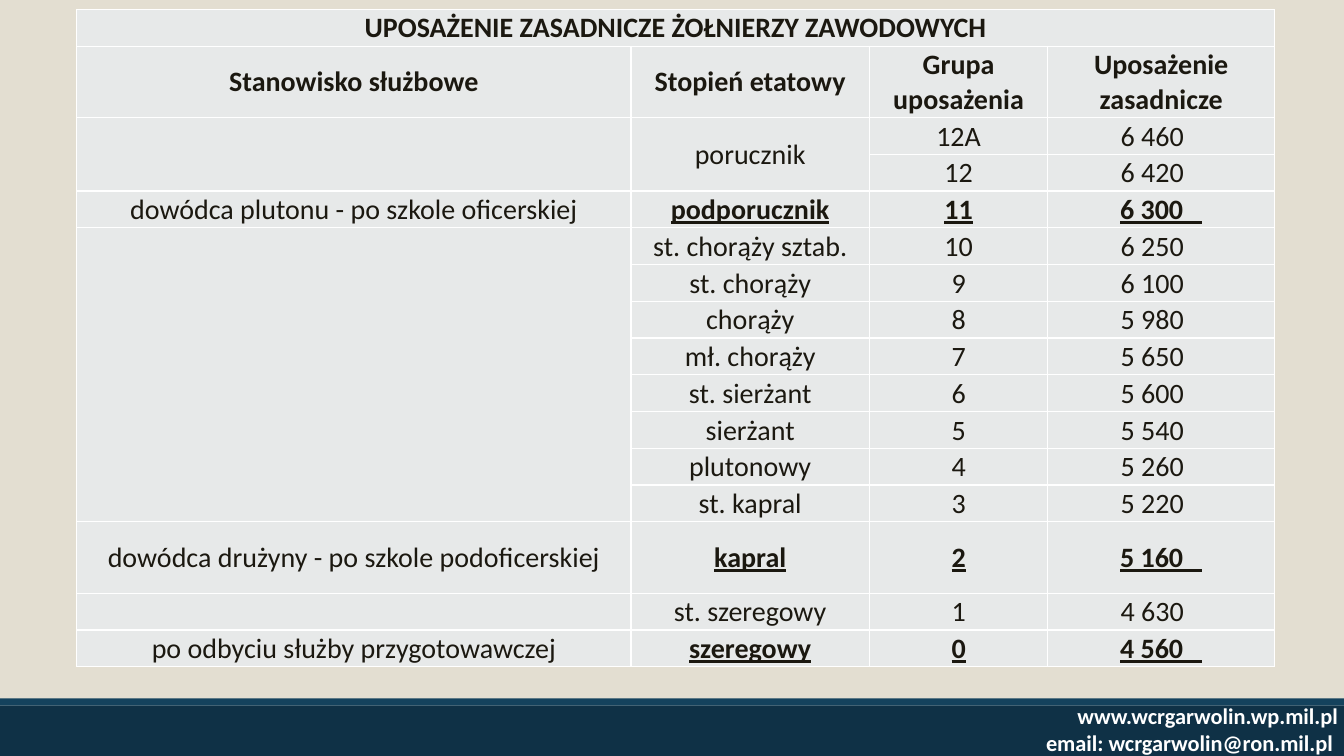
from dataclasses import dataclass

from lxml import etree
from pptx import Presentation
from pptx.dml.color import RGBColor
from pptx.enum.shapes import MSO_SHAPE
from pptx.enum.text import MSO_ANCHOR, MSO_AUTO_SIZE, PP_ALIGN
from pptx.oxml.ns import qn
from pptx.util import Emu, Pt

RECTANGLE = MSO_SHAPE.RECTANGLE
CENTER, RIGHT = PP_ALIGN.CENTER, PP_ALIGN.RIGHT
MIDDLE = MSO_ANCHOR.MIDDLE
GROW = MSO_AUTO_SIZE.SHAPE_TO_FIT_TEXT

EMU_PER_PX = 9525
FONT = "Calibri"
COLORS = {
    "background": "E3DED1",
    "footer": "0F3146",
    "strip": "14425D",
    "cell": "E7E9E9",
    "text": "1B1810",
    "white": "FFFFFF",
}
COLUMN_WIDTHS = (528, 227, 170, 216)
ROW_HEIGHT, TALL_ROW_HEIGHT = 35, 68
PAY_INSET = 18  # shifts the plain amounts left of the column centre


@dataclass(frozen=True)
class Band:
    top: int
    height: int
    color: str


@dataclass(frozen=True)
class PayRow:
    post: str
    rank: str
    group: str
    pay: str
    emphasised: bool = False
    tall: bool = False


@dataclass(frozen=True)
class Merge:
    first: tuple[int, int]
    last: tuple[int, int]


BANDS = (Band(672, 48, "footer"), Band(665, 7, "strip"))
TITLE = "UPOSAŻENIE ZASADNICZE ŻOŁNIERZY ZAWODOWYCH"
HEADINGS = ("Stanowisko służbowe", "Stopień etatowy", "Grupa uposażenia", "Uposażenie zasadnicze")
PAY_ROWS = (
    PayRow("", "porucznik", "12A", "6 460"),
    PayRow("", "", "12", "6 420"),
    PayRow("dowódca plutonu - po szkole oficerskiej", "podporucznik", "11", "6 300   ", True),
    PayRow("", "st. chorąży sztab.", "10", "6 250"),
    PayRow("", "st. chorąży", "9", "6 100"),
    PayRow("", "chorąży", "8", "5 980"),
    PayRow("", "mł. chorąży", "7", "5 650"),
    PayRow("", "st. sierżant", "6", "5 600"),
    PayRow("", "sierżant", "5", "5 540"),
    PayRow("", "plutonowy", "4", "5 260"),
    PayRow("", "st. kapral", "3", "5 220"),
    PayRow("dowódca drużyny - po szkole podoficerskiej", "kapral", "2", "5 160   ", True, True),
    PayRow("", "st. szeregowy", "1", "4 630"),
    PayRow("po odbyciu służby przygotowawczej", "szeregowy", "0", "4 560   ", True),
)
MERGES = (
    Merge((0, 0), (0, 3)),
    Merge((2, 0), (3, 0)),
    Merge((2, 1), (3, 1)),
    Merge((5, 0), (12, 0)),
)
CONTACT_LINES = ("www.wcrgarwolin.wp.mil.pl", "email: wcrgarwolin@ron.mil.pl ")


def px(length: int) -> Emu:
    return Emu(length * EMU_PER_PX)


def color(name: str) -> RGBColor:
    return RGBColor.from_string(COLORS[name])


def add_run(paragraph, text: str, size: int, color_name: str,
            bold: bool = False, underline: bool = False) -> None:
    run = paragraph.add_run()
    run.text = text
    font = run.font
    font.name, font.size = FONT, Pt(size)
    font.bold, font.underline = bold, underline
    font.color.rgb = color(color_name)


def add_band(slide, band: Band) -> None:
    shape = slide.shapes.add_shape(RECTANGLE, 0, px(band.top), px(1280), px(band.height))
    shape.shadow.inherit = False
    shape.fill.solid()
    shape.fill.fore_color.rgb = color(band.color)
    shape.line.fill.background()


def add_contact(slide) -> None:
    frame = slide.shapes.add_textbox(px(542), px(664), px(742), px(61)).text_frame
    frame.word_wrap = True
    frame.auto_size = GROW
    paragraph = frame.paragraphs[0]
    paragraph.alignment = RIGHT
    for index, line in enumerate(CONTACT_LINES):
        if index:
            paragraph.add_line_break()
        add_run(paragraph, line, 16, "white", bold=True)


def style_cell(cell) -> None:
    properties = cell._tc.get_or_add_tcPr()
    for side in ("a:lnL", "a:lnR", "a:lnT", "a:lnB"):
        border = etree.SubElement(properties, qn(side), w=str(Pt(1)))
        fill = etree.SubElement(border, qn("a:solidFill"))
        etree.SubElement(fill, qn("a:srgbClr"), val=COLORS["white"])
    cell.fill.solid()
    cell.fill.fore_color.rgb = color("cell")
    cell.vertical_anchor = MIDDLE
    cell.margin_left = cell.margin_right = cell.margin_top = px(1)
    cell.margin_bottom = 0


def write_cell(cell, text: str, bold: bool = False, underline: bool = False) -> None:
    if text:
        paragraph = cell.text_frame.paragraphs[0]
        paragraph.alignment = CENTER
        add_run(paragraph, text, 20, "text", bold=bold, underline=underline)


def add_pay_table(slide) -> None:
    heights = [ROW_HEIGHT, TALL_ROW_HEIGHT]
    heights += [TALL_ROW_HEIGHT if row.tall else ROW_HEIGHT for row in PAY_ROWS]
    table = slide.shapes.add_table(
        len(heights), len(COLUMN_WIDTHS), px(73), px(9), px(sum(COLUMN_WIDTHS)), px(sum(heights))
    ).table
    table.first_row = table.horz_banding = False
    for column, width in zip(table.columns, COLUMN_WIDTHS):
        column.width = px(width)
    for table_row, height in zip(table.rows, heights):
        table_row.height = px(height)
    for cell in table.iter_cells():
        style_cell(cell)
    for merge in MERGES:
        table.cell(*merge.first).merge(table.cell(*merge.last))

    # Title and headings
    write_cell(table.cell(0, 0), TITLE, bold=True)
    for column_index, heading in enumerate(HEADINGS):
        write_cell(table.cell(1, column_index), heading, bold=True)

    # Pay scale
    for row_index, row in enumerate(PAY_ROWS, start=2):
        write_cell(table.cell(row_index, 0), row.post)
        for column_index, text in enumerate((row.rank, row.group, row.pay), start=1):
            write_cell(table.cell(row_index, column_index), text, row.emphasised, row.emphasised)
        if not row.emphasised:
            table.cell(row_index, 3).margin_right = px(PAY_INSET)


def main() -> None:
    presentation = Presentation()
    presentation.slide_width, presentation.slide_height = px(1280), px(720)
    slide = presentation.slides.add_slide(presentation.slide_layouts[6])
    slide.background.fill.solid()
    slide.background.fill.fore_color.rgb = color("background")

    # Footer
    for band in BANDS:
        add_band(slide, band)
    add_contact(slide)

    # Table
    add_pay_table(slide)
    presentation.save("out.pptx")


if __name__ == "__main__":
    main()
